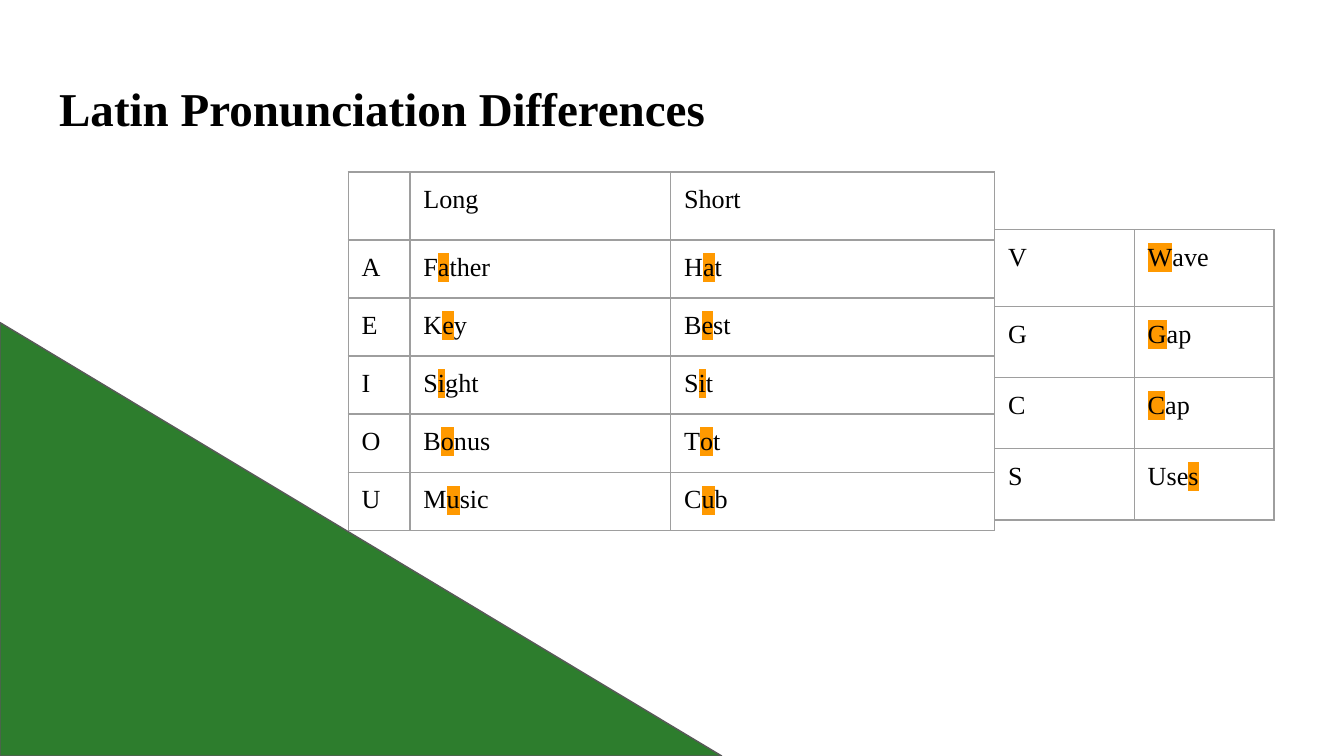
from dataclasses import dataclass

from lxml import etree
from pptx import Presentation
from pptx.dml.color import RGBColor
from pptx.enum import shapes, text
from pptx.oxml import ns
from pptx.util import Inches, Pt

COLORS = {
    "text": "000000",
    "highlight": "FF9900",
    "border": "9E9E9E",
    "triangle": "2D7D2D",
    "outline": "595959",
}
FONT = "Times New Roman"
PAGE_WIDTH = Inches(10)
PAGE_HEIGHT = PAGE_WIDTH * 9 // 16
INSET = Inches(0.1)
MARGINS = {f"margin_{side}": INSET for side in ("left", "top", "right", "bottom")}


@dataclass
class SoundTable:
    """A table whose [bracketed] letters are highlighted."""
    left: float
    top: float
    columns: list[float]
    heights: list[float]
    rows: list[list[str]]


VOWELS = SoundTable(
    2.59, 1.28, [0.46, 1.94, 2.41], [0.5] + [2.16 / 5] * 5,
    [
        ["", "Long", "Short"],
        ["A", "F[a]ther", "H[a]t"],
        ["E", "K[e]y", "B[e]st"],
        ["I", "S[i]ght", "S[i]t"],
        ["O", "B[o]nus", "T[o]t"],
        ["U", "M[u]sic", "C[u]b"],
    ],
)
CONSONANTS = SoundTable(
    7.4, 1.71, [1.04, 1.04], [0.57] + [0.53] * 3,
    [["V", "[W]ave"], ["G", "[G]ap"], ["C", "[C]ap"], ["S", "Use[s]"]],
)


def rgb(name: str) -> RGBColor:
    return RGBColor.from_string(COLORS[name])


def set_all(target, values: dict) -> None:
    for name, value in values.items():
        setattr(target, name, value)


def add_color(parent, name: str) -> None:
    etree.SubElement(parent, ns.qn("a:srgbClr"), val=COLORS[name])


def add_span(para, wording: str, size: float, bold: bool = False,
             highlighted: bool = False) -> None:
    span = para.add_run()
    span.text = wording
    span.font.color.rgb = rgb("text")
    if highlighted:
        properties = span.font._element
        add_color(etree.SubElement(properties, ns.qn("a:highlight")), "highlight")
    set_all(span.font, {"name": FONT, "size": Pt(size), "bold": bold})


def add_borders(cell) -> None:
    properties = cell._tc.get_or_add_tcPr()
    for index, side in enumerate("LRTB"):
        line = etree.Element(ns.qn(f"a:ln{side}"), w=str(Pt(0.75)))
        add_color(etree.SubElement(line, ns.qn("a:solidFill")), "border")
        properties.insert(index, line)


def fill_cell(cell, marked: str) -> None:
    set_all(cell, MARGINS)
    cell.fill.background()
    add_borders(cell)
    para = cell.text_frame.paragraphs[0]
    for index, part in enumerate(marked.replace("]", "[").split("[")):
        if part:
            add_span(para, part, 14, highlighted=index % 2 == 1)


def add_sound_table(page, sounds: SoundTable) -> None:
    table = page.shapes.add_table(
        len(sounds.rows), len(sounds.columns),
        Inches(sounds.left), Inches(sounds.top),
        Inches(sum(sounds.columns)), Inches(sum(sounds.heights)),
    ).table
    set_all(table, {"first_row": False, "horz_banding": False})
    for column, width in zip(table.columns, sounds.columns):
        column.width = Inches(width)
    for row, height, words in zip(table.rows, sounds.heights, sounds.rows):
        row.height = Inches(height)
        for cell, word in zip(row.cells, words):
            fill_cell(cell, word)


def add_title(page, wording: str) -> None:
    title = page.shapes.title
    set_all(title, {"left": Inches(0.34), "top": Inches(0.49),
                    "width": Inches(9.32), "height": Inches(0.63)})
    frame = title.text_frame
    set_all(frame, MARGINS | {
        "word_wrap": True,
        "auto_size": text.MSO_AUTO_SIZE.NONE,
        "vertical_anchor": text.MSO_ANCHOR.TOP,
    })
    para = frame.paragraphs[0]
    para.alignment = text.PP_ALIGN.LEFT
    add_span(para, wording, 25.2, bold=True)


def add_corner_triangle(page) -> None:
    top = Inches(2.4)
    triangle = page.shapes.add_shape(
        shapes.MSO_SHAPE.RIGHT_TRIANGLE,
        Inches(0), top, Inches(5.37), PAGE_HEIGHT - top,
    )
    triangle.shadow.inherit = False
    triangle.fill.solid()
    triangle.fill.fore_color.rgb = rgb("triangle")
    triangle.line.color.rgb = rgb("outline")
    triangle.line.width = Pt(0.75)


def main() -> None:
    deck = Presentation()
    set_all(deck, {"slide_width": PAGE_WIDTH, "slide_height": PAGE_HEIGHT})
    page = deck.slides.add_slide(deck.slide_layouts.get_by_name("Title Only"))
    add_title(page, "Latin Pronunciation Differences")
    for sounds in (VOWELS, CONSONANTS):
        add_sound_table(page, sounds)
    add_corner_triangle(page)
    deck.save("out.pptx")


if __name__ == "__main__":
    main()
